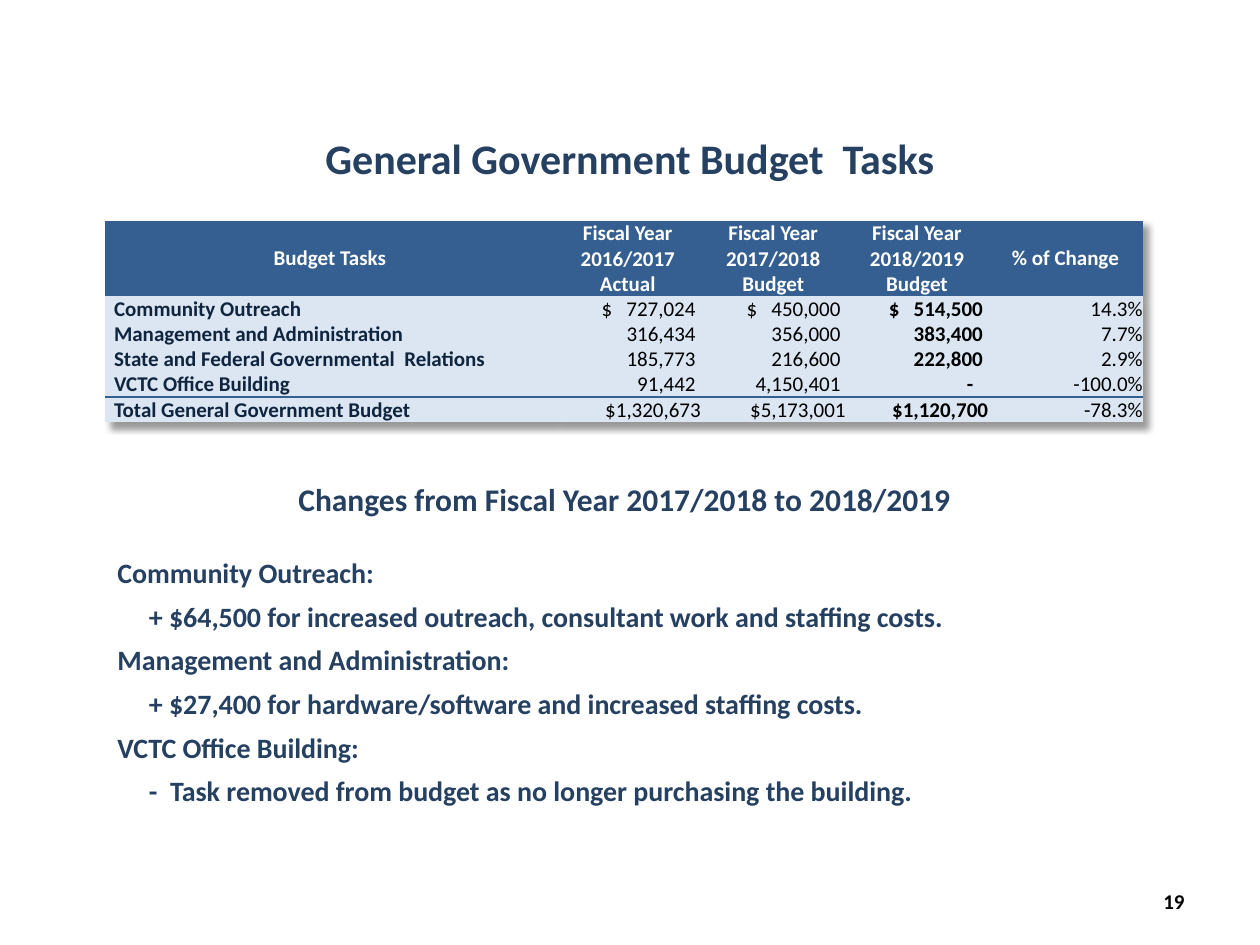
from lxml import etree
from pptx import Presentation
from pptx.dml.color import RGBColor
from pptx.enum.text import MSO_ANCHOR, PP_ALIGN
from pptx.oxml.ns import qn
from pptx.util import Pt

LEFT, CENTER, RIGHT = PP_ALIGN.LEFT, PP_ALIGN.CENTER, PP_ALIGN.RIGHT
TOP, MIDDLE, BOTTOM = MSO_ANCHOR.TOP, MSO_ANCHOR.MIDDLE, MSO_ANCHOR.BOTTOM

NAVY = RGBColor(0x25, 0x40, 0x61)
INK = RGBColor(0x0F, 0x24, 0x3E)
BLUE = RGBColor(0x36, 0x5F, 0x91)
PALE = RGBColor(0xDC, 0xE6, 0xF2)
WHITE = RGBColor(0xFF, 0xFF, 0xFF)
BLACK = RGBColor(0, 0, 0)

FONT = "Calibri"
BLANK_LAYOUT = 6
PLAIN_STYLE = "{2D5ABB26-0587-4C30-8999-92F81FD0307C}"
COLUMN_WIDTHS = [257, 83.5, 82.8, 81.4, 88.3]
HEADER_HEIGHT, ROW_HEIGHT = 43, 14.4
SIDE_MARGIN, AMOUNT_MARGIN, DASH_MARGIN = 5.2, 3, 8.5
CURRENT_BUDGET = 3

HEADERS = [
    "Budget Tasks",
    "Fiscal Year 2016/2017\nActual",
    "Fiscal Year 2017/2018\nBudget",
    "Fiscal Year 2018/2019\nBudget",
    "% of Change",
]
TASKS = [
    ["Community Outreach", "$   727,024", "$   450,000", "$   514,500", "14.3%"],
    ["Management and Administration", "316,434", "356,000", "383,400", "7.7%"],
    ["State and Federal Governmental  Relations", "185,773", "216,600", "222,800", "2.9%"],
    ["VCTC Office Building", "91,442", "4,150,401", "-", "-100.0%"],
    ["Total General Government Budget", "$1,320,673", "$5,173,001", "$1,120,700", "-78.3%"],
]
CHANGES = [
    ("Community Outreach:",
     "+ $64,500 for increased outreach, consultant work and staffing costs."),
    ("Management and Administration:",
     "+ $27,400 for hardware/software and increased staffing costs."),
    ("VCTC Office Building:",
     "-  Task removed from budget as no longer purchasing the building."),
]


def style_paragraph(para, size, color, bold=True, align=LEFT):
    para.alignment = align
    font = para.font
    font.name, font.size, font.bold = FONT, Pt(size), bold
    font.color.rgb = color


def add_text(page, left, top, width, height, lines, size, color, align=LEFT, anchor=TOP):
    box = page.shapes.add_textbox(Pt(left), Pt(top), Pt(width), Pt(height))
    frame = box.text_frame
    frame.word_wrap = True
    frame.vertical_anchor = anchor
    frame.text = "\n".join(lines)
    for para in frame.paragraphs:
        style_paragraph(para, size, color, align=align)
    return frame


def add_changes(page):
    lines = [line for change in CHANGES for line in change]
    frame = add_text(page, 60, 314, 636, 154, lines, 16, NAVY)
    for index, para in enumerate(frame.paragraphs):
        if index:
            para.space_before = Pt(5.75)
        if index % 2:
            para._p.get_or_add_pPr().set("marL", str(Pt(18)))


def fill_cell(cell, text, fill, color, bold, align, anchor, left=0, right=0):
    cell.text = text
    cell.fill.solid()
    cell.fill.fore_color.rgb = fill
    cell.vertical_anchor = anchor
    cell.margin_left, cell.margin_right = Pt(left), Pt(right)
    cell.margin_top = cell.margin_bottom = 0
    for para in cell.text_frame.paragraphs:
        style_paragraph(para, 12, color, bold, align)


def add_color(parent, color):
    return etree.SubElement(parent, qn("a:srgbClr"), val=str(color))


def add_border(cell, side):
    line = etree.Element(qn("a:ln" + side), w=str(Pt(1.5)))
    add_color(etree.SubElement(line, qn("a:solidFill")), BLUE)
    cell._tc.get_or_add_tcPr().insert(0, line)


def add_table_shadow(table):
    effects = etree.Element(qn("a:effectLst"))
    shadow = etree.SubElement(effects, qn("a:outerShdw"), blurRad=str(Pt(4)),
                              dist=str(Pt(4)), dir="2700000", algn="tl")
    etree.SubElement(add_color(shadow, BLACK), qn("a:alpha"), val="40000")
    table._tbl.tblPr.insert(0, effects)


def amount_margin(text, row, column):
    if text == "-":
        return DASH_MARGIN
    if row == len(TASKS) or column == len(HEADERS) - 1:
        return 0
    return AMOUNT_MARGIN


def add_budget_table(page):
    height = HEADER_HEIGHT + ROW_HEIGHT * len(TASKS)
    frame = page.shapes.add_table(len(TASKS) + 1, len(HEADERS), Pt(60), Pt(126),
                                  Pt(sum(COLUMN_WIDTHS)), Pt(height))
    table = frame.table
    table.horz_banding = False
    table._tbl.tblPr.find(qn("a:tableStyleId")).text = PLAIN_STYLE
    add_table_shadow(table)
    for column, width in zip(table.columns, COLUMN_WIDTHS):
        column.width = Pt(width)
    for index, row in enumerate(table.rows):
        row.height = Pt(ROW_HEIGHT if index else HEADER_HEIGHT)

    for column, text in enumerate(HEADERS):
        fill_cell(table.cell(0, column), text, BLUE, WHITE, True, CENTER, MIDDLE,
                  SIDE_MARGIN, SIDE_MARGIN)
    for row, values in enumerate(TASKS, start=1):
        for column, text in enumerate(values):
            cell = table.cell(row, column)
            if column == 0:
                fill_cell(cell, text, PALE, INK, True, LEFT, BOTTOM,
                          SIDE_MARGIN, SIDE_MARGIN)
            else:
                fill_cell(cell, text, PALE, BLACK, column == CURRENT_BUDGET, RIGHT,
                          BOTTOM, right=amount_margin(text, row, column))
    for column in range(len(HEADERS)):
        add_border(table.cell(len(TASKS) - 1, column), "B")
        add_border(table.cell(len(TASKS), column), "T")


def main():
    deck = Presentation()
    deck.slide_width, deck.slide_height = Pt(720), Pt(540)
    page = deck.slides.add_slide(deck.slide_layouts[BLANK_LAYOUT])
    add_text(page, 120, 72, 480, 36, ["General Government Budget  Tasks"], 24, NAVY, CENTER)
    add_budget_table(page)
    add_text(page, 516, 500.4, 168, 28.8, ["19"], 12, BLACK, RIGHT, MIDDLE)
    add_changes(page)
    add_text(page, 114, 270.7, 486, 29, ["Changes from Fiscal Year 2017/2018 to 2018/2019"],
             18, NAVY, CENTER)
    deck.save("out.pptx")


if __name__ == "__main__":
    main()
